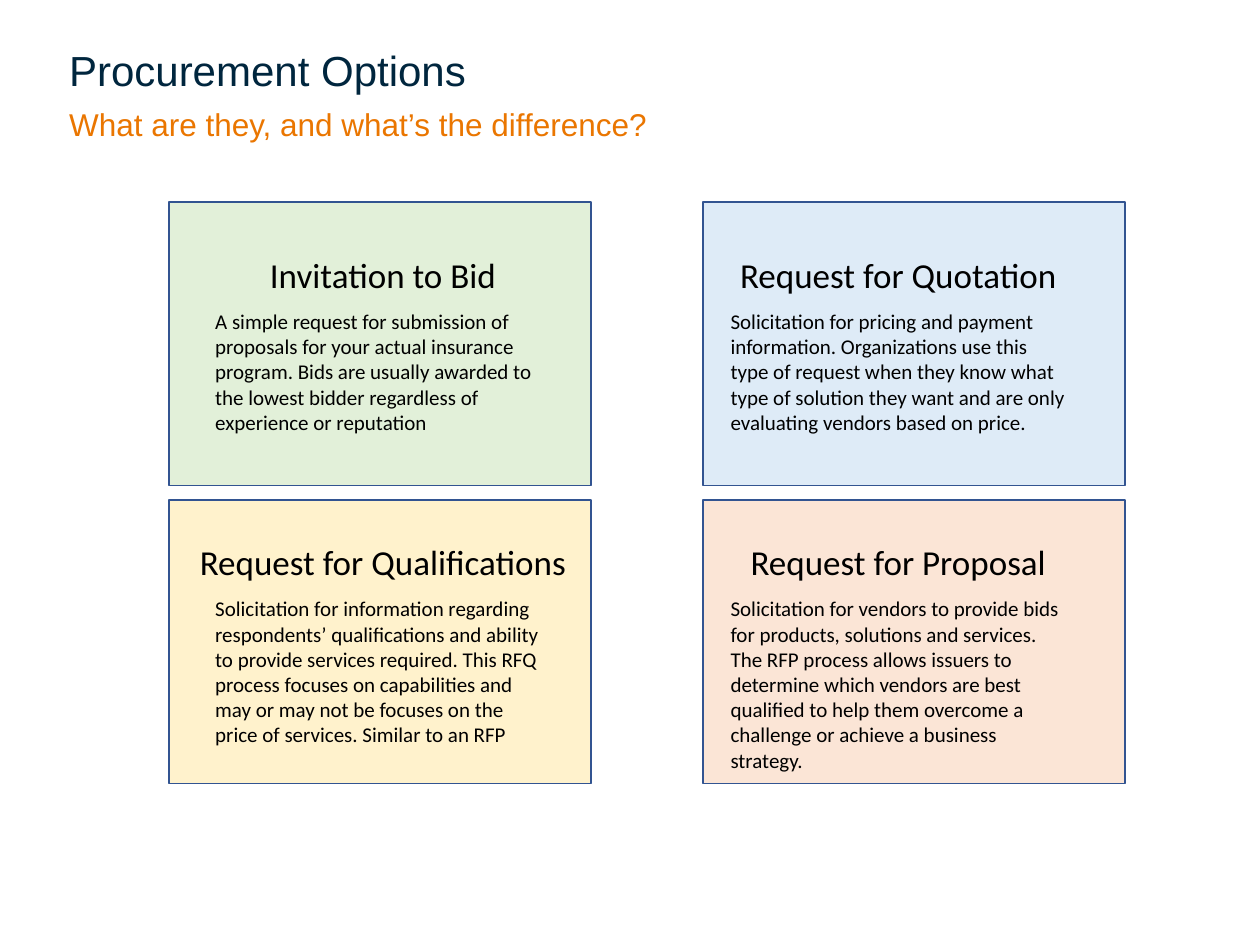
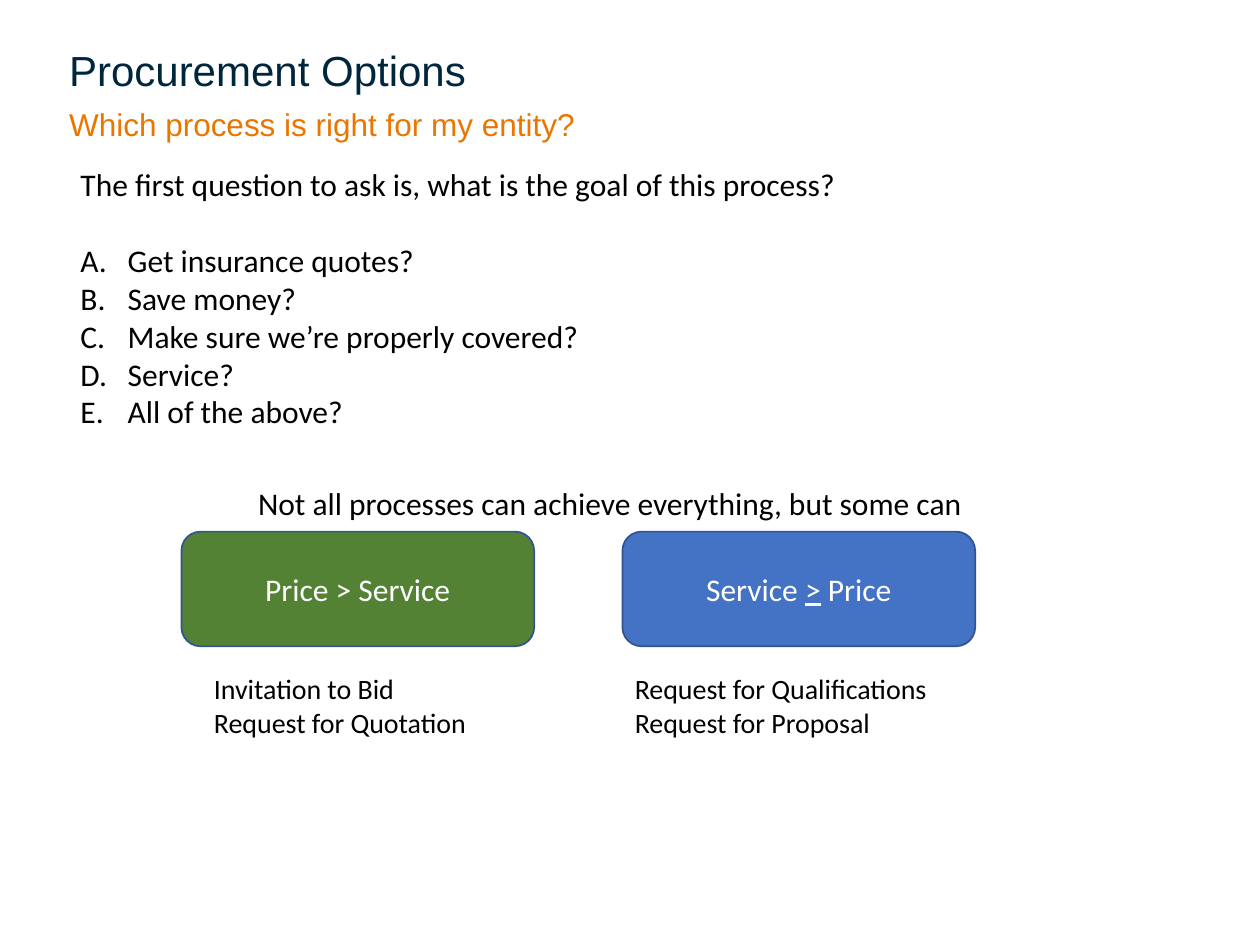
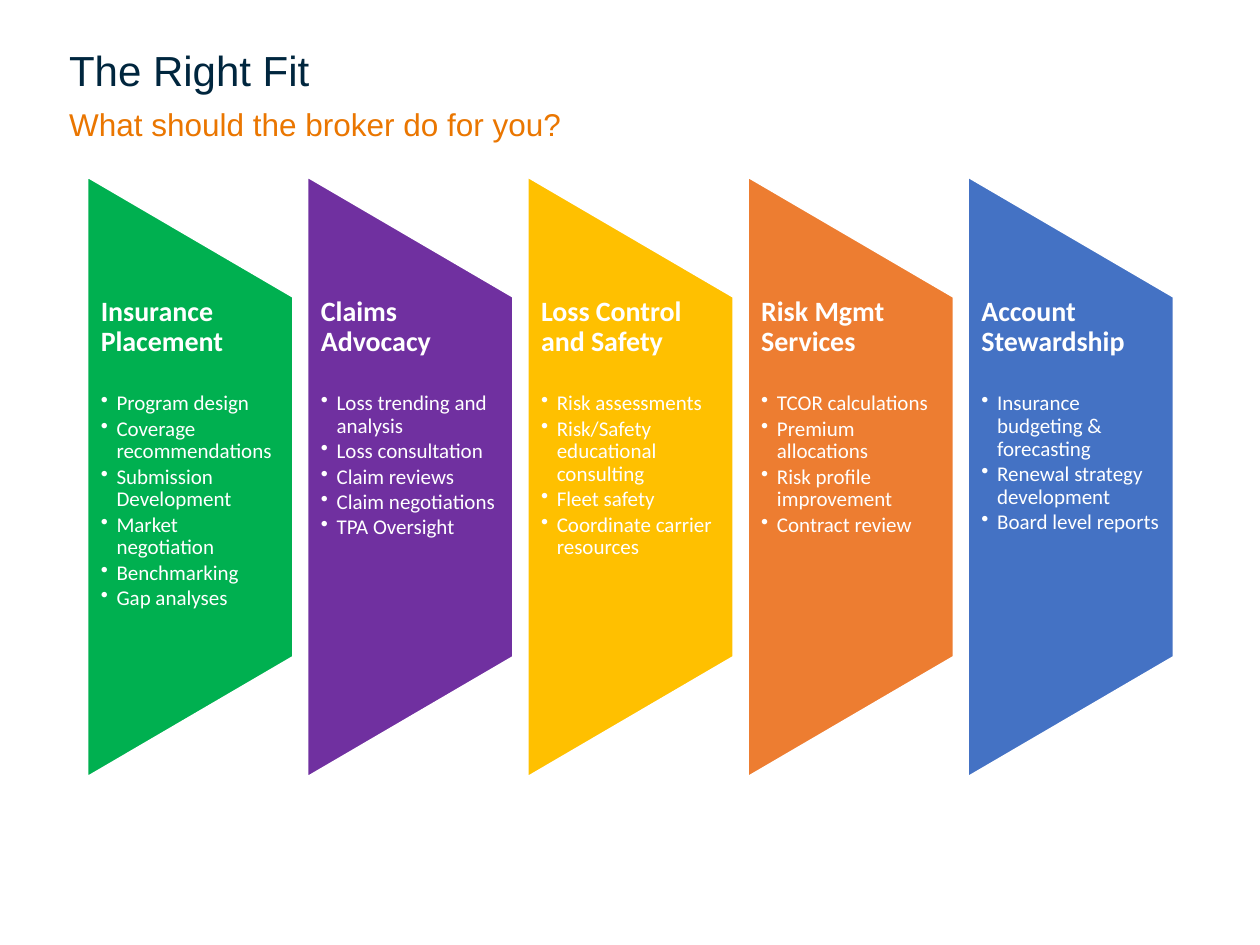
from lxml import etree
from pptx import Presentation, util as u
from pptx.dml.color import RGBColor
from pptx.enum import shapes, text
from pptx.oxml.ns import qn

Pt = u.Pt
BLACK = RGBColor(0x00, 0x00, 0x00)
WHITE = RGBColor(0xFF, 0xFF, 0xFF)
NAVY = RGBColor(0x00, 0x26, 0x3E)
ORANGE = RGBColor(0xEA, 0x76, 0x00)
OUTLINE = RGBColor(0x32, 0x54, 0x91)
PALE_GREEN = RGBColor(0xE2, 0xF0, 0xD9)
PALE_BLUE = RGBColor(0xDE, 0xEB, 0xF7)
PALE_YELLOW = RGBColor(0xFF, 0xF2, 0xCC)
PALE_ORANGE = RGBColor(0xFB, 0xE5, 0xD6)
DARK_GREEN = RGBColor(0x54, 0x82, 0x35)
BLUE = RGBColor(0x44, 0x72, 0xC4)
GREEN = RGBColor(0x00, 0xB0, 0x50)
PURPLE = RGBColor(0x70, 0x30, 0xA0)
GOLD = RGBColor(0xFF, 0xC0, 0x00)
CORAL = RGBColor(0xED, 0x7D, 0x31)

TOP, MIDDLE, BOTTOM = (text.MSO_ANCHOR.TOP, text.MSO_ANCHOR.MIDDLE,
                       text.MSO_ANCHOR.BOTTOM)
CENTER = text.PP_ALIGN.CENTER


def add_text(tf, content, first=False, size=18, font="Calibri", color=BLACK,
             bold=False, align=None, bullet=None, indent=0, before=None,
             after=None, spacing=None):
    """Add one paragraph; content is a string or a list of (text, underline)."""
    p = tf.paragraphs[0] if first else tf.add_paragraph()
    if bullet:
        pPr = p._p.get_or_add_pPr()
        pPr.set("marL", str(Pt(indent)))
        pPr.set("indent", str(-Pt(indent)))
        tag, attribute = (("a:buChar", "char") if len(bullet) == 1
                          else ("a:buAutoNum", "type"))
        etree.SubElement(pPr, qn(tag)).set(attribute, bullet)
    if align is not None:
        p.alignment = align
    if before is not None:
        p.space_before = Pt(before)
    if after is not None:
        p.space_after = Pt(after)
    if spacing is not None:
        p.line_spacing = spacing
    for words, underline in [(content, False)] if isinstance(content, str) else content:
        r = p.add_run()
        r.text = words
        r.font.name, r.font.size, r.font.bold = font, Pt(size), bold
        r.font.color.rgb = color
        if underline:
            r.font.underline = True


class Deck:
    """Holds the shared style and the slide being built."""

    def __init__(self):
        self.prs = Presentation()
        self.prs.slide_width, self.prs.slide_height = Pt(720), Pt(540)
        self.s = None

    def slide(self, title, subtitle):
        self.s = self.prs.slides.add_slide(self.prs.slide_layouts[6])
        self.box(32.4, 5.8, 648, 51.8, [title], anchor=BOTTOM,
                 size=24, font="Arial", color=NAVY)
        self.box(32.4, 61.2, 648, 39.6, [subtitle], anchor=MIDDLE,
                 insets=(7.2, 0, 7.2, 20.7), font="Arial", color=ORANGE)

    def box(self, x, y, w, h, lines=(), anchor=TOP, wrap=True,
            insets=(7.2, 3.6, 7.2, 3.6), **fmt):
        tf = self.s.shapes.add_textbox(Pt(x), Pt(y), Pt(w), Pt(h)).text_frame
        tf.word_wrap, tf.vertical_anchor = wrap, anchor
        tf.margin_left, tf.margin_top, tf.margin_right, tf.margin_bottom = map(Pt, insets)
        for i, line in enumerate(lines):
            add_text(tf, line, first=i == 0, **fmt)
        return tf

    def shape(self, kind, x, y, w, h, fill, line=OUTLINE, label=None, rotation=0):
        sp = self.s.shapes.add_shape(kind, Pt(x), Pt(y), Pt(w), Pt(h))
        sp.shadow.inherit = False
        sp.fill.solid()
        sp.fill.fore_color.rgb = fill
        sp.line.color.rgb, sp.line.width = line, Pt(1)
        sp.rotation = rotation
        if label:
            sp.text_frame.word_wrap = True
            sp.text_frame.vertical_anchor = MIDDLE
            add_text(sp.text_frame, label, first=True, color=WHITE, align=CENTER)


def options_slide(deck):
    deck.slide("Procurement Options", "What are they, and what’s the difference?")
    # Columns: card left, body left. Rows: card top, heading top.
    columns = [(96.5, 115.9), (401.8, 410.4)]
    rows = [(115.5, 141.1), (285.8, 305.3)]
    body_w = 205.9
    # Heading, heading width, body height, fill, body
    cards = [
        ("Invitation to Bid", 145, 80, PALE_GREEN,
         "A simple request for submission of proposals for your actual insurance "
         "program. Bids are usually awarded to the lowest bidder regardless of "
         "experience or reputation"),
        ("Request for Quotation", 197, 80, PALE_BLUE,
         "Solicitation for pricing and payment information. Organizations use this "
         "type of request when they know what type of solution they want and are "
         "only evaluating vendors based on price."),
        ("Request for Qualifications", 226, 94, PALE_YELLOW,
         "Solicitation for information regarding respondents’ qualifications and "
         "ability to provide services required. This RFQ process focuses on "
         "capabilities and may or may not be focuses on the price of services. "
         "Similar to an RFP"),
        ("Request for Proposal", 185, 109, PALE_ORANGE,
         "Solicitation for vendors to provide bids for products, solutions and "
         "services. The RFP process allows issuers to determine which vendors are "
         "best qualified to help them overcome a challenge or achieve a business "
         "strategy."),
    ]
    for i, (heading, heading_w, body_h, fill, body) in enumerate(cards):
        card_x, body_x = columns[i % 2]
        card_y, heading_y = rows[i // 2]
        deck.shape(shapes.MSO_SHAPE.RECTANGLE, card_x, card_y, 241.2, 162, fill)
        deck.box(body_x + (body_w - heading_w) / 2, heading_y, heading_w, 31.7,
                 [heading], wrap=False, size=20, align=CENTER)
        deck.box(body_x, heading_y + 31.7, body_w, body_h, [body], size=12)


def process_slide(deck):
    deck.slide("Procurement Options", "Which process is right for my entity?")
    # Question with lettered answers
    tf = deck.box(38.9, 90.7, 511.2, 181.4,
                  ["The first question to ask is, what is the goal of this process?"])
    answers = ["Get insurance quotes?", "Save money?", "Make sure we’re properly covered?",
               "Service?", "All of the above?"]
    for i, answer in enumerate(answers):
        add_text(tf, answer, bullet="alphaUcPeriod", indent=27, before=0 if i else 22)

    # Two priorities and the processes that serve them
    deck.box(140.4, 272.9, 432, 28.8,
             ["Not all processes can achieve everything, but some can"])
    priorities = [
        (103.7, DARK_GREEN, "Price > Service", 115.2, 177.8,
         ["Invitation to Bid", "Request for Quotation"]),
        (355.7, BLUE, [("Service ", False), (">", True), (" Price", False)], 355.7, 201.6,
         ["Request for Qualifications", "Request for Proposal"]),
    ]
    for x, fill, label, list_x, list_w, processes in priorities:
        deck.shape(shapes.MSO_SHAPE.ROUNDED_RECTANGLE, x, 303.8, 201.6, 65.5,
                   fill, label=label)
        deck.box(list_x, 380.2, list_w, 46.1, processes, size=16)


def broker_slide(deck):
    deck.slide("The Right Fit", "What should the broker do for you?")
    services = [
        ("Insurance Placement", GREEN,
         ["Program design", "Coverage recommendations", "Submission Development",
          "Market negotiation", "Benchmarking", "Gap analyses"]),
        ("Claims Advocacy", PURPLE,
         ["Loss trending and analysis", "Loss consultation", "Claim reviews",
          "Claim negotiations", "TPA Oversight"]),
        ("Loss Control and Safety", GOLD,
         ["Risk assessments", "Risk/Safety educational consulting", "Fleet safety",
          "Coordinate carrier resources"]),
        ("Risk Mgmt Services", CORAL,
         ["TCOR calculations", "Premium allocations", "Risk profile improvement",
          "Contract review"]),
        ("Account Stewardship", BLUE,
         ["Insurance budgeting & forecasting", "Renewal strategy development",
          "Board level reports"]),
    ]
    left, pitch, panel_w, panel_h, middle = 50, 125.8, 117.4, 342.7, 272.5
    for i, (heading, fill, duties) in enumerate(services):
        x = left + i * pitch
        # The panel is turned a quarter, so its width and height swap
        deck.shape(shapes.MSO_SHAPE.FLOWCHART_MANUAL_OPERATION,
                   x + (panel_w - panel_h) / 2, middle - panel_w / 2,
                   panel_h, panel_w, fill, line=WHITE, rotation=270)
        tf = deck.box(x, 169.9, panel_w, 205.9, [heading], insets=(7.6, 0, 7.6, 0),
                      size=16, color=WHITE, bold=True, spacing=0.9, after=20)
        for duty in duties:
            add_text(tf, duty, size=12, color=WHITE, bullet="•", indent=9,
                     spacing=0.9, after=1.5)


def main():
    deck = Deck()
    options_slide(deck)
    process_slide(deck)
    broker_slide(deck)
    deck.prs.save("out.pptx")


if __name__ == "__main__":
    main()
